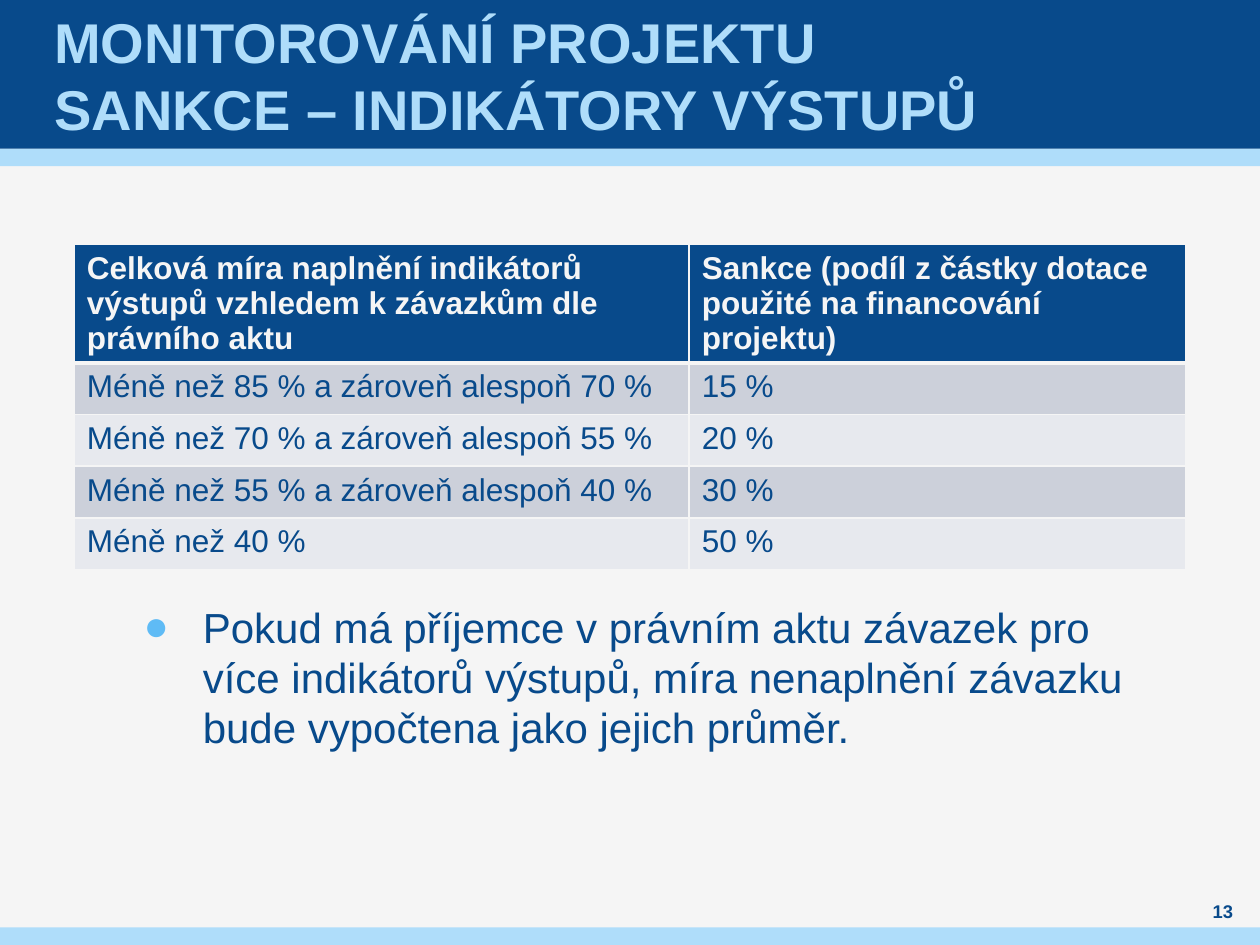
from pptx import Presentation
from pptx import util as u
from pptx.dml.color import RGBColor
from pptx.enum import shapes, text
from pptx.oxml import parse_xml
from pptx.oxml.ns import nsdecls

Inches, Pt = u.Inches, u.Pt
THEME = {
    "font": "Arial", "navy": "084A8B", "sky": "AFDDFA", "paper": "F5F5F5",
    "bullet": "5FBBF5", "bands": ("CCD0DA", "E7E9EE"),
    "title": 32, "body": 24, "table": 18, "number": 10.5,
}


def format_text(paragraph, size, color, bold=False):
    formats = {"name": THEME["font"], "size": Pt(THEME[size]), "bold": bold}
    for name, value in formats.items():
        setattr(paragraph.font, name, value)
    paragraph.font.color.rgb = RGBColor.from_string(THEME[color])


def format_frame(frame, anchor, side=0):
    formats = {
        "word_wrap": True, "auto_size": text.MSO_AUTO_SIZE.NONE, "vertical_anchor": anchor,
        "margin_left": Inches(side), "margin_right": Inches(side),
        "margin_top": 0, "margin_bottom": 0,
    }
    for name, value in formats.items():
        setattr(frame, name, value)


presentation = Presentation()
presentation.slide_width, presentation.slide_height = Inches(10), Inches(7.5)
slide = presentation.slides.add_slide(presentation.slide_layouts[5])
slide.background.fill.solid()
slide.background.fill.fore_color.rgb = RGBColor.from_string(THEME["paper"])

# Header and footer bars
for top, height, color in ((1.18, 0.14, "sky"), (0, 1.18, "navy"), (7.36, 0.14, "sky")):
    bar = slide.shapes.add_shape(
        shapes.MSO_SHAPE.RECTANGLE, 0, Inches(top), Inches(10), Inches(height))
    bar.shadow.inherit = False
    bar.fill.solid()
    bar.fill.fore_color.rgb = RGBColor.from_string(THEME[color])
    bar.line.fill.background()

# Title, brought in front of the bars
title = slide.shapes.title
title._element.getparent().append(title._element)
title.left, title.top, title.width, title.height = (
    Inches(value) for value in (0.39, 0, 9.21, 1.18))
format_frame(title.text_frame, text.MSO_ANCHOR.MIDDLE, 0.04)
paragraph = title.text_frame.paragraphs[0]
paragraph.text = "MONITOROVÁNÍ PROJEKTU\vSANKCE – INDIKÁTORY VÝSTUPŮ"
paragraph.alignment = text.PP_ALIGN.LEFT
format_text(paragraph, "title", "sky", True)

# Table of sanctions
rows = (
    ("Celková míra naplnění indikátorů výstupů vzhledem k závazkům dle právního aktu",
     "Sankce (podíl z částky dotace použité na financování projektu)"),
    ("Méně než 85 % a zároveň alespoň 70 %", "15 %"),
    ("Méně než 70 % a zároveň alespoň 55 %", "20 %"),
    ("Méně než 55 % a zároveň alespoň 40 %", "30 %"),
    ("Méně než 40 %", "50 %"),
)
table = slide.shapes.add_table(
    len(rows), 2, Inches(0.59), Inches(1.94), Inches(8.82), Inches(2.56)).table
for column, width in zip(table.columns, (4.88, 3.94)):
    column.width = Inches(width)
for row_index, row in enumerate(rows):
    is_header = row_index == 0
    table.rows[row_index].height = Inches(0.92 if is_header else 0.41)
    fill = THEME["navy"] if is_header else THEME["bands"][(row_index - 1) % 2]
    for column_index, wording in enumerate(row):
        cell = table.cell(row_index, column_index)
        cell.text = wording
        format_text(cell.text_frame.paragraphs[0], "table",
                    "paper" if is_header else "navy", is_header)
        widths = {"lnL": 1, "lnR": 1, "lnT": 3 if row_index == 1 else 1,
                  "lnB": 3 if is_header else 1}
        for side, width in widths.items():
            cell._tc.get_or_add_tcPr().append(parse_xml(
                f'<a:{side} {nsdecls("a")} w="{Pt(width)}"><a:solidFill>'
                f'<a:srgbClr val="{THEME["paper"]}"/></a:solidFill></a:{side}>'))
        cell.fill.solid()
        cell.fill.fore_color.rgb = RGBColor.from_string(fill)

# Slide number
number = slide.shapes.add_textbox(Inches(9.45), Inches(7.13), Inches(0.51), Inches(0.2))
format_frame(number.text_frame, text.MSO_ANCHOR.MIDDLE)
paragraph = number.text_frame.paragraphs[0]
paragraph.text = "13"
paragraph.alignment = text.PP_ALIGN.CENTER
format_text(paragraph, "number", "navy", True)

# Bulleted remark
remark = slide.shapes.add_textbox(Inches(0.83), Inches(4.77), Inches(8.27), Inches(2.05))
format_frame(remark.text_frame, text.MSO_ANCHOR.TOP)
paragraph = remark.text_frame.paragraphs[0]
paragraph.text = ("Pokud má příjemce v právním aktu závazek pro více indikátorů výstupů, "
                  "míra nenaplnění závazku bude vypočtena jako jejich průměr.")
paragraph.line_spacing, paragraph.space_after = Pt(28.8), Pt(6)
properties = paragraph._p.get_or_add_pPr()
properties.set("marL", str(Inches(0.78)))
properties.set("indent", str(Inches(-0.47)))
for bullet in (f'<a:buClr {nsdecls("a")}><a:srgbClr val="{THEME["bullet"]}"/></a:buClr>',
               f'<a:buFont {nsdecls("a")} typeface="{THEME["font"]}"/>',
               f'<a:buChar {nsdecls("a")} char="●"/>'):
    properties.append(parse_xml(bullet))
format_text(paragraph, "body", "navy")

presentation.save("out.pptx")
